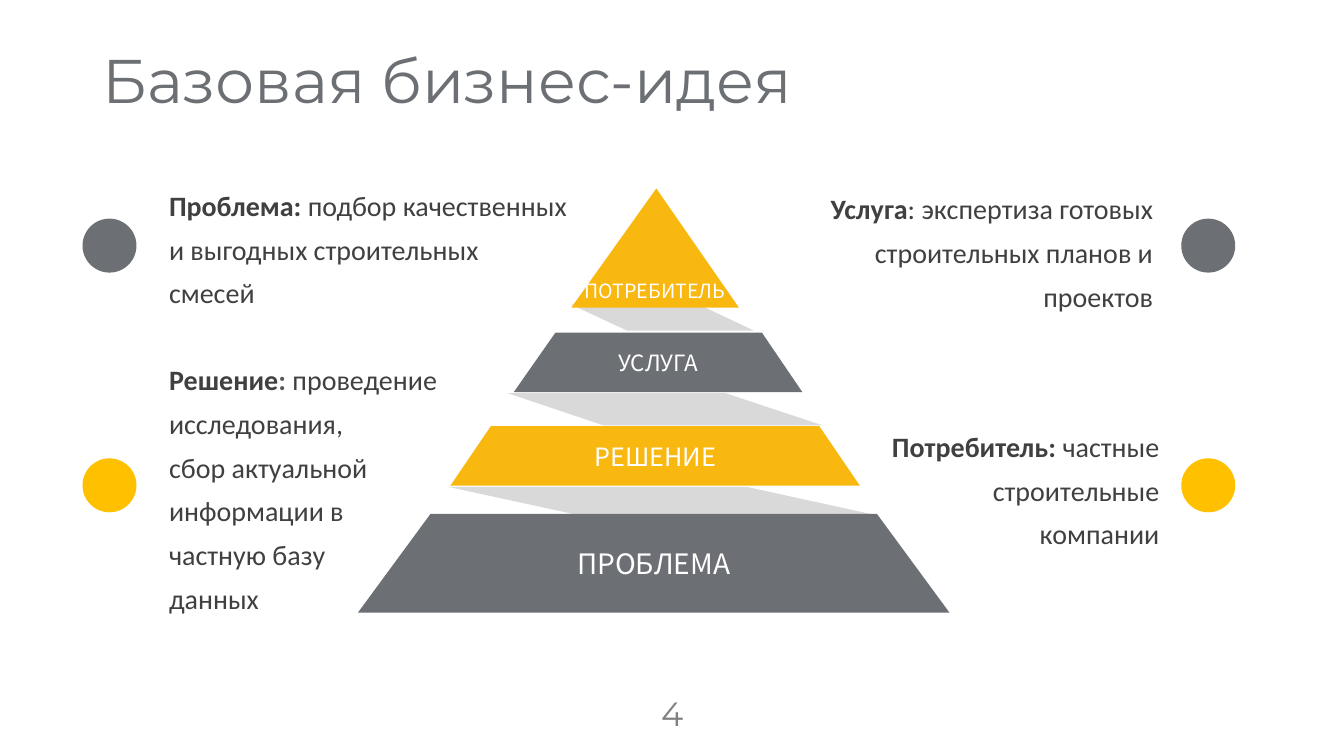
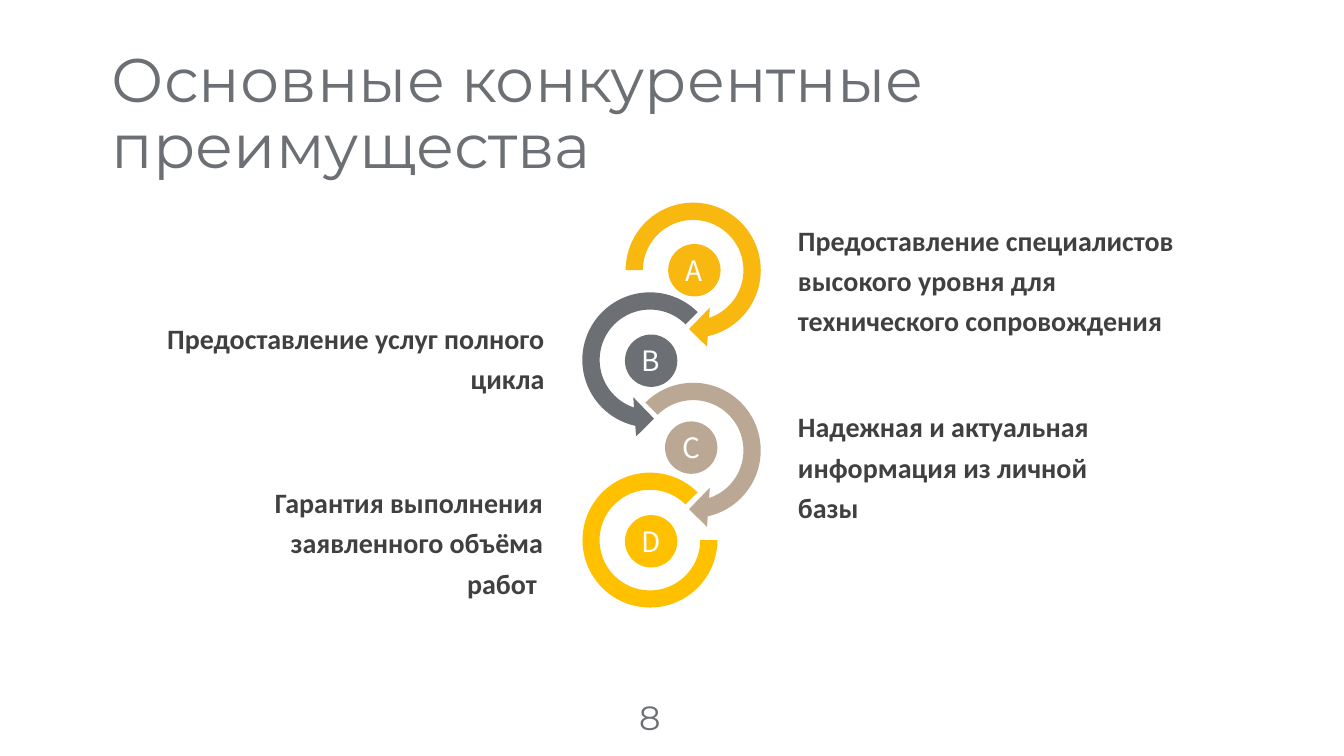
import pptx
import pptx.dml.color
import pptx.enum.shapes
import pptx.enum.text
import pptx.util

Cm = pptx.util.Cm
RGB = pptx.dml.color.RGBColor
KIND = pptx.enum.shapes.MSO_SHAPE
ALIGN = pptx.enum.text.PP_ALIGN
ANCHOR = pptx.enum.text.MSO_ANCHOR
GROW = pptx.enum.text.MSO_AUTO_SIZE.SHAPE_TO_FIT_TEXT

SLATE = RGB(0x6C, 0x70, 0x74)
AMBER = RGB(0xF9, 0xB8, 0x10)
GOLD = RGB(0xFF, 0xC0, 0x00)
SAND = RGB(0xBB, 0xA8, 0x94)
SILVER = RGB(0xD9, 0xD9, 0xD9)
GRAY = RGB(0x80, 0x80, 0x80)
INK = RGB(0x40, 0x40, 0x40)
ASH = RGB(0x59, 0x59, 0x59)
WHITE = RGB(0xFF, 0xFF, 0xFF)

TITLE = {"name": "Montserrat", "size": 44, "tone": SLATE}
FOOT = {"name": "Montserrat", "size": 24}
NOTE = {"name": "Calibri", "size": 20, "tone": INK}
LABEL = {"name": "Noto Sans CJK SC", "size": 20, "tone": WHITE}
BOLD = {"bold": True}
PLAIN = {"bold": False}


def paint(shape, tone):
    shape.shadow.inherit = False
    shape.fill.solid()
    shape.fill.fore_color.rgb = tone
    shape.line.fill.background()


def write(shape, paras, style, frame, para):
    box = shape.text_frame
    for key, value in ({"word_wrap": True} | frame).items():
        setattr(box, key, value)
    for i, runs in enumerate(paras):
        line = box.add_paragraph() if i else box.paragraphs[0]
        for key, value in para.items():
            setattr(line, key, value)
        for text, extra in runs:
            run = line.add_run()
            run.text = text
            for key, value in (style | extra).items():
                if key == "tone":
                    run.font.color.rgb = value
                elif key == "size":
                    run.font.size = pptx.util.Pt(value)
                else:
                    setattr(run.font, key, value)


deck = pptx.Presentation()
deck.slide_width = Cm(33.87)
deck.slide_height = Cm(19.05)

pages = [
    {
        "title": ("Базовая бизнес-идея", (2.34, 1.02, 29.21, 2.16)),
        "foot": ("4", GRAY, (13.13, 17.45, 7.62, 1.02)),
        "space": 1.3,
        "notes": [
            ((4.01, 4.37, 10.62, 3.58), ALIGN.LEFT,
             [[("Проблема: ", BOLD),
               ("подбор качественных и выгодных строительных смесей", PLAIN)]]),
            ((4.01, 8.76, 8, 6.93), ALIGN.LEFT,
             [[("Решение", BOLD), (": ", BOLD | {"tone": ASH}),
               ("проведение исследования,", PLAIN)],
              [("сбор актуальной информации в", PLAIN)],
              [("частную базу", PLAIN)],
              [("данных", PLAIN)]]),
            ((19.86, 4.45, 9.45, 3.58), ALIGN.RIGHT,
             [[("Услуга", BOLD),
               (": экспертиза готовых строительных планов и проектов", PLAIN)]]),
            ((21.77, 10.44, 7.7, 3.58), ALIGN.RIGHT,
             [[("Потребитель: ", BOLD),
               ("частные строительные компании", PLAIN)]]),
        ],
    },
    {
        "title": ("Основные конкурентные преимущества", (2.57, 1.52, 30.1, 2.79)),
        "foot": ("8", SLATE, (12.57, 17.55, 7.62, 1.02)),
        "space": 1.2,
        "notes": [
            ((19.86, 5.33, 11.23, 4.37), ALIGN.LEFT,
             [[("Предоставление специалистов высокого уровня "
                "для технического сопровождения", BOLD)]]),
            ((19.86, 10.03, 8.26, 3.33), ALIGN.LEFT,
             [[("Надежная и актуальная информация из личной базы", BOLD)]]),
            ((2.64, 7.8, 11.33, 2.24), ALIGN.RIGHT,
             [[("Предоставление услуг полного цикла", BOLD)]]),
            ((6.5, 11.94, 7.44, 3.33), ALIGN.RIGHT,
             [[("Гарантия выполнения заявленного объёма работ ", BOLD)]]),
        ],
    },
]

slides = []
for page in pages:
    slide = deck.slides.add_slide(deck.slide_layouts[6])
    slides.append(slide)
    text, place = page["title"]
    box = slide.shapes.add_textbox(*map(Cm, place))
    write(box, [[(text, {})]], TITLE,
          {"vertical_anchor": ANCHOR.MIDDLE}, {"line_spacing": 0.9})
    for place, side, paras in page["notes"]:
        box = slide.shapes.add_textbox(*map(Cm, place))
        write(box, paras, NOTE, {"auto_size": GROW},
              {"alignment": side, "line_spacing": page["space"]})
    text, tone, place = page["foot"]
    box = slide.shapes.add_textbox(*map(Cm, place))
    write(box, [[(text, {"tone": tone})]], FOOT,
          {"vertical_anchor": ANCHOR.MIDDLE}, {"alignment": ALIGN.CENTER})

idea, edge = slides

bands = [
    (7.67, 8.33, (14.38, 17.6), (15.8, 19), SILVER, None, 0),
    (9.91, 10.72, (12.8, 18.29), (15.21, 20.73), SILVER, None, 0),
    (12.27, 12.98, (11.3, 18.82), (14.58, 22.07), SILVER, None, 0),
    (4.75, 7.75, (16.54, 16.54), (14.4, 18.62), AMBER, "ПОТРЕБИТЕЛЬ", 14),
    (12.95, 15.44, (10.85, 22.1), (9.02, 23.93), SLATE, "ПРОБЛЕМА", 20),
    (10.74, 12.24, (12.37, 20.65), (11.35, 21.67), AMBER, "РЕШЕНИЕ", 18),
    (8.38, 9.88, (14, 19.2), (12.95, 20.22), SLATE, "УСЛУГА", 16),
]
for top, base, high, low, tone, text, size in bands:
    pen = idea.shapes.build_freeform(Cm(low[0]), Cm(base))
    pen.add_line_segments([(Cm(high[0]), Cm(top)), (Cm(high[1]), Cm(top)),
                           (Cm(low[1]), Cm(base))], close=True)
    band = pen.convert_to_shape()
    paint(band, tone)
    if text:
        peak = high[0] == high[1]
        write(band, [[(text, {"size": size})]], LABEL,
              {"vertical_anchor": ANCHOR.BOTTOM if peak else ANCHOR.MIDDLE,
               "margin_left": 0, "margin_right": 0},
              {"alignment": ALIGN.CENTER})

for left in (2.08, 29.77):
    for top, tone in ((5.51, SLATE), (11.55, GOLD)):
        dot = idea.shapes.add_shape(KIND.OVAL, Cm(left), Cm(top), Cm(1.36), Cm(1.36))
        paint(dot, tone)

rings = [
    ("C", SAND, KIND.CIRCULAR_ARROW, (15.49, 9.37, 3.96),
     (0.11, 11.42, 45, 135, 0.125), (16.76, 10.62)),
    ("D", GOLD, KIND.BLOCK_ARC, (14.68, 11.91, 3.4),
     (0, 189, 0.127), (15.75, 12.98)),
    ("B", SLATE, KIND.LEFT_CIRCULAR_ARROW, (14.4, 7.09, 3.96),
     (0.11, 11.42, 63, 189, 0.125), (15.75, 8.43)),
    ("A", AMBER, KIND.CIRCULAR_ARROW, (15.49, 4.83, 3.96),
     (0.11, 11.42, 45, 108, 0.125), (16.84, 6.15)),
]
chain = edge.shapes.add_group_shape()
for text, tone, kind, (left, top, size), turns, spot in rings:
    ring = chain.shapes.add_shape(kind, Cm(left), Cm(top), Cm(size), Cm(size))
    for i, turn in enumerate(turns):
        ring.adjustments[i] = turn
    paint(ring, tone)
    disc = chain.shapes.add_shape(KIND.OVAL, *map(Cm, spot), Cm(1.32), Cm(1.32))
    paint(disc, tone)
    write(disc, [[(text, {})]], LABEL,
          {"vertical_anchor": ANCHOR.MIDDLE, "margin_left": 0, "margin_right": 0},
          {"alignment": ALIGN.CENTER})

deck.save("out.pptx")
